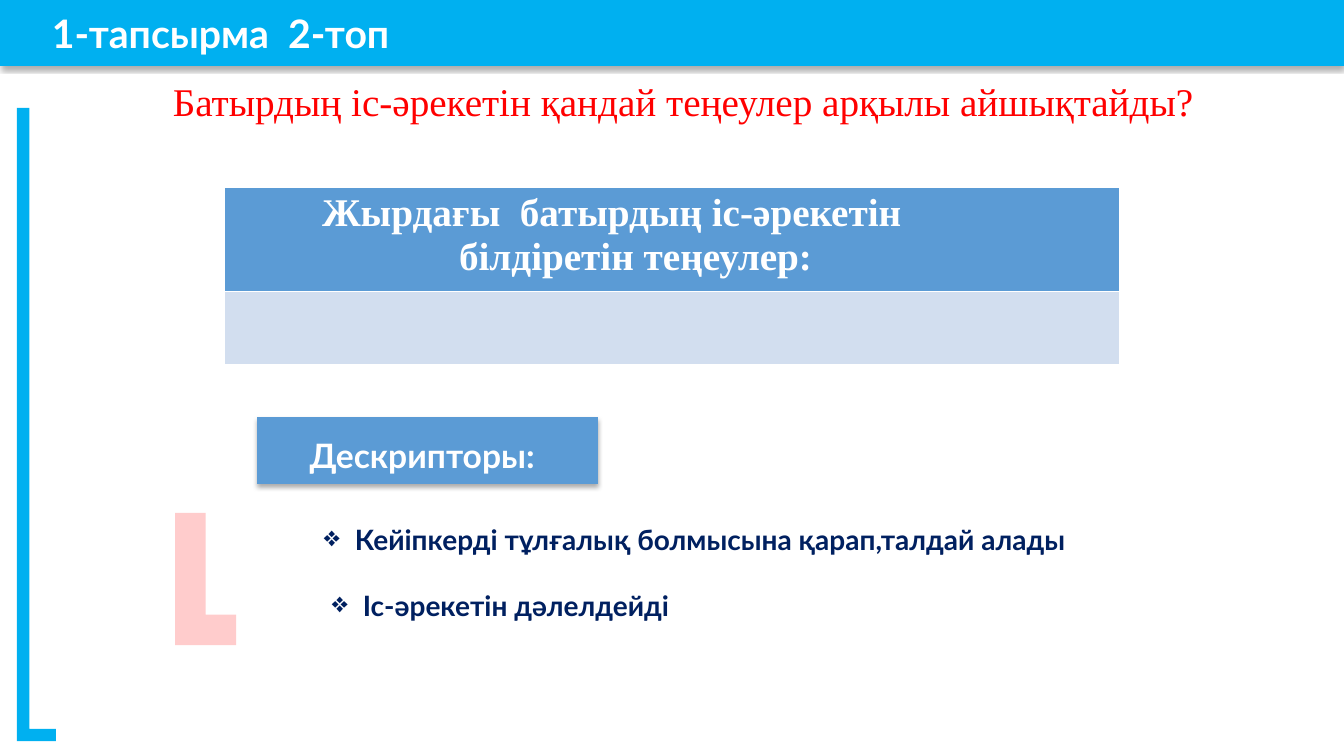
from lxml.etree import SubElement
from pptx import Presentation
from pptx.dml.color import RGBColor
from pptx.enum.shapes import MSO_SHAPE as SHAPE
from pptx.enum.text import MSO_ANCHOR as ANCHOR, PP_ALIGN as ALIGN
from pptx.oxml.ns import qn
from pptx.util import Pt

# Content; boxes are (left, top, width, height) in px
SLIDE_SIZE = (1344, 756)
SKY, BLUE, PALE, PINK = "00B0F0", "5B9BD5", "D2DEEF", "FFCCCC"
WHITE, RED, NAVY = "FFFFFF", "FF0000", "002060"
SANS, SERIF = "Lato", "Times New Roman"

BANNER = ("1-тапсырма  2-топ", (0, 0, 1344, 66))
QUESTION = ("Батырдың іс-әрекетін қандай теңеулер арқылы айшықтайды?", (163, 72, 1087, 57))
TABLE_BOX = (224, 187, 896, 177)
ROW_HEIGHTS = (104, 73)
HEADER_LINES = [("Жырдағы  батырдың іс-әрекетін", 88), ("білдіретін теңеулер:", 225)]
DESCRIPTOR_LABEL = ("Дескрипторы:", (257, 417, 341, 67))
DESCRIPTORS = [
    ("Кейіпкерді тұлғалық болмысына қарап,талдай алады", (263, 518, 871, 44)),
    ("Іс-әрекетін дәлелдейді", (271, 584, 497, 44)),
]
CORNERS = [  # box before the quarter turn, thickness, colour
    ((-277, 402, 627, 39), 0.317, SKY),
    ((147, 541, 117, 61), 0.5, PINK),
]


def px(length):
    return round(length * 914400 / 100.8)


def color(value):
    return RGBColor.from_string(value)


def write(paragraph, text, size, font_name, font_color, bold=True):
    paragraph.text = text
    paragraph.alignment = ALIGN.LEFT
    font = paragraph.font
    font.size, font.name, font.bold = Pt(size), font_name, bold
    font.color.rgb = color(font_color)


def indent(paragraph, left, first=0):
    properties = paragraph._p.get_or_add_pPr()
    properties.set("marL", str(px(left)))
    properties.set("indent", str(px(first)))
    return properties


def add_block(kind, box, fill):
    shape = slide.shapes.add_shape(kind, *map(px, box))
    shape.shadow.inherit = False
    shape.fill.solid()
    shape.fill.fore_color.rgb = color(fill)
    shape.line.fill.background()
    return shape


def add_shadow(shape):
    effects = shape._element.spPr.find(qn("a:effectLst"))
    shadow = SubElement(effects, qn("a:outerShdw"), blurRad=str(Pt(3.5)),
                        dist=str(Pt(2.2)), dir="5400000", rotWithShape="0")
    shade = SubElement(shadow, qn("a:srgbClr"), val="000000")
    SubElement(shade, qn("a:alpha"), val="32000")


def add_label(kind, label, fill, size):
    text, box = label
    shape = add_block(kind, box, fill)
    add_shadow(shape)
    shape.text_frame.vertical_anchor = ANCHOR.MIDDLE
    write(shape.text_frame.paragraphs[0], text, size, SANS, WHITE)
    return shape


def add_text_box(box):
    frame = slide.shapes.add_textbox(*map(px, box)).text_frame
    frame.word_wrap = True
    return frame.paragraphs[0]


presentation = Presentation()
presentation.slide_width, presentation.slide_height = map(px, SLIDE_SIZE)
slide = presentation.slides.add_slide(presentation.slide_layouts[6])

# Banner and question
banner = add_label(SHAPE.RECTANGLE, BANNER, SKY, 28)
banner.text_frame.margin_left = px(52)
write(add_text_box(QUESTION[1]), QUESTION[0], 28, SERIF, RED, bold=False)

# Corner marks
for box, thickness, fill in CORNERS:
    corner = add_block(SHAPE.BENT_UP_ARROW, box, fill)
    corner.rotation = 90
    for index, value in enumerate((thickness, 0, 0)):
        corner.adjustments[index] = value

# Table with a header and an empty answer row
table = slide.shapes.add_table(len(ROW_HEIGHTS), 1, *map(px, TABLE_BOX)).table
for row, height, fill in zip(table.rows, ROW_HEIGHTS, (BLUE, PALE)):
    row.height = px(height)
    row.cells[0].fill.solid()
    row.cells[0].fill.fore_color.rgb = color(fill)
header = table.cell(0, 0).text_frame
header.text = "\n".join(text for text, _ in HEADER_LINES)
for paragraph, (text, left) in zip(header.paragraphs, HEADER_LINES):
    indent(paragraph, left)
    write(paragraph, text, 28, SERIF, WHITE)

# Descriptors
add_label(SHAPE.FLOWCHART_INTERNAL_STORAGE, DESCRIPTOR_LABEL, BLUE, 24)
for text, box in DESCRIPTORS:
    paragraph = add_text_box(box)
    SubElement(indent(paragraph, 82, -31), qn("a:buChar"), char="❖")
    write(paragraph, text, 20, SANS, NAVY)

presentation.save("out.pptx")
